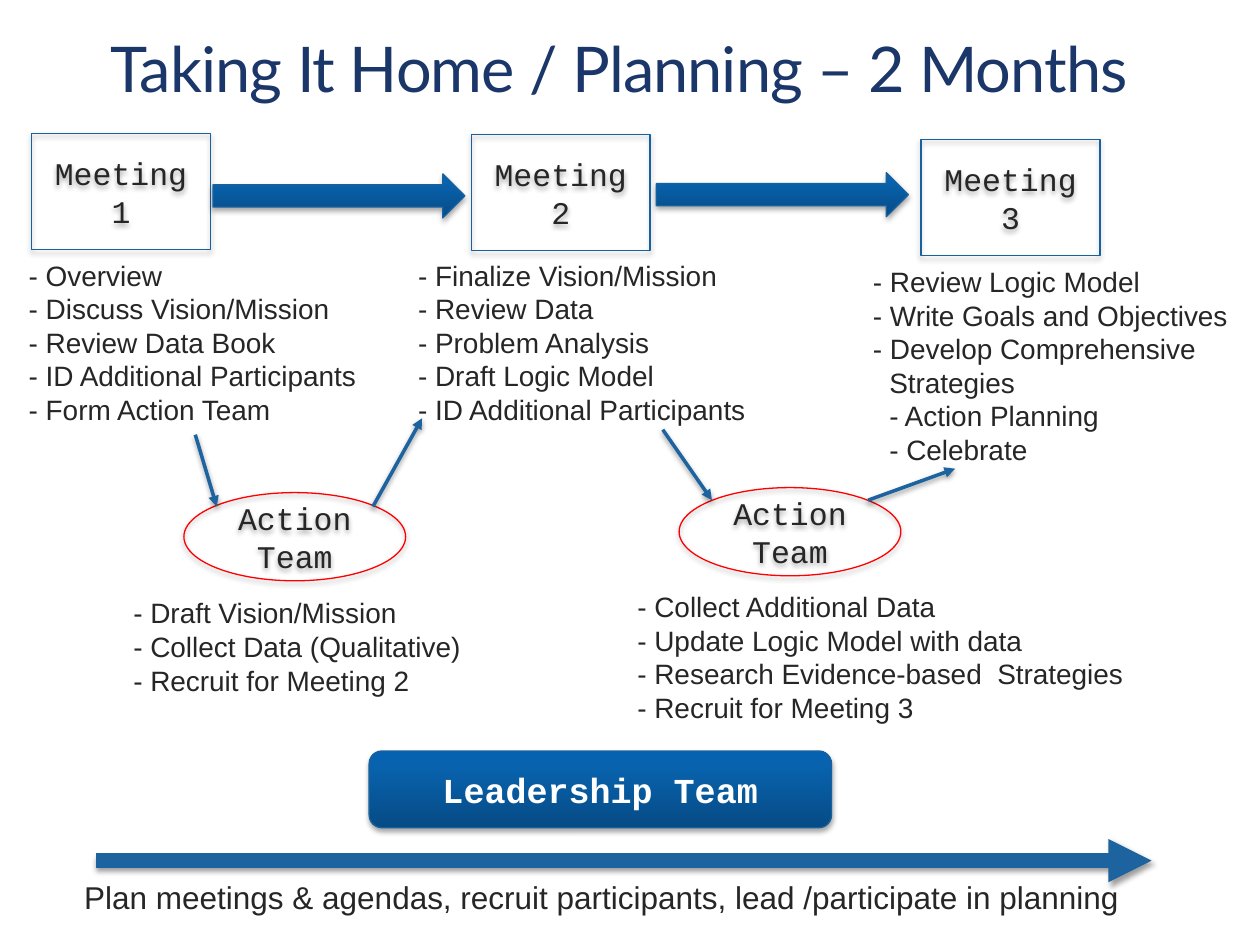
from copy import deepcopy
from dataclasses import dataclass

from lxml import etree
from pptx import Presentation
from pptx.dml.color import RGBColor
from pptx.enum.shapes import MSO_CONNECTOR as Connector, MSO_SHAPE as Shape
from pptx.enum.text import MSO_ANCHOR as Anchor, PP_ALIGN as Align
from pptx.oxml.ns import qn
from pptx.util import Inches, Pt


@dataclass(frozen=True)
class Theme:
    title: str = "1B3668"
    text: str = "262626"
    white: str = "FFFFFF"
    outline: str = "18619F"
    connector: str = "1C639F"
    team: str = "FF0000"
    shadow: str = "000000"
    gradient: tuple = ((0, "064B85"), (0.8, "0862AD"), (1, "0562B1"))
    title_font: str = "Lato"
    body_font: str = "Arial"
    label_font: str = "Courier New"
    title_size: int = 36
    banner_size: int = 20
    label_size: int = 18
    list_size: int = 16
    hanging: float = 0.13


class SlideBuilder:
    def __init__(self, slide, theme):
        self.slide = slide
        self.theme = theme

    def add_run(self, paragraph, text, font, size, color, bold=False):
        run = paragraph.add_run()
        run.text = text
        run.font.name = font
        run.font.size = Pt(size)
        run.font.bold = bold
        run.font.color.rgb = RGBColor.from_string(color)
        return run

    def add_shadow(self, shape, opacity, distance):
        properties = shape._element.spPr
        for old in properties.findall(qn("a:effectLst")):
            properties.remove(old)
        effects = etree.SubElement(properties, qn("a:effectLst"))
        shadow = etree.SubElement(
            effects, qn("a:outerShdw"), blurRad=str(Pt(3.1)),
            dist=str(Pt(distance)), dir="5400000", rotWithShape="0")
        color = etree.SubElement(shadow, qn("a:srgbClr"), val=self.theme.shadow)
        etree.SubElement(color, qn("a:alpha"), val=str(opacity * 1000))

    def title(self, text, left, top, width, height):
        shape = self.slide.shapes.title
        shape.left, shape.top = Inches(left), Inches(top)
        shape.width, shape.height = Inches(width), Inches(height)
        shape.text_frame.vertical_anchor = Anchor.MIDDLE
        paragraph = shape.text_frame.paragraphs[0]
        paragraph.alignment = Align.CENTER
        run = self.add_run(paragraph, text, self.theme.title_font,
                           self.theme.title_size, self.theme.title)
        run._r.get_or_add_rPr().set("spc", "-50")

    def box(self, kind, left, top, width, height, outline, filled=False):
        shape = self.slide.shapes.add_shape(
            kind, Inches(left), Inches(top), Inches(width), Inches(height))
        if filled:
            shape.fill.gradient()
            shape.fill.gradient_angle = 90
            first = shape._element.spPr.find(".//" + qn("a:gs"))
            first.addnext(deepcopy(first))
            for stop, (position, color) in zip(shape.fill.gradient_stops,
                                               self.theme.gradient):
                stop.position = position
                stop.color.rgb = RGBColor.from_string(color)
        else:
            shape.fill.background()
        shape.line.color.rgb = RGBColor.from_string(outline)
        shape.line.width = Pt(0.75)
        self.add_shadow(shape, 35, 1.8)
        return shape

    def label(self, shape, text, size, color, bold=False):
        frame = shape.text_frame
        frame.word_wrap = True
        frame.vertical_anchor = Anchor.MIDDLE
        paragraph = frame.paragraphs[0]
        paragraph.alignment = Align.CENTER
        self.add_run(paragraph, text, self.theme.label_font, size, color, bold)

    def meeting(self, text, left, top):
        shape = self.box(Shape.RECTANGLE, left, top, 1.42, 0.92, self.theme.outline)
        self.label(shape, text, self.theme.label_size, self.theme.text)

    def action_team(self, left, top):
        shape = self.box(Shape.OVAL, left, top, 1.76, 0.7, self.theme.team)
        self.label(shape, "Action Team", self.theme.label_size, self.theme.text)

    def block_arrow(self, left, top):
        self.box(Shape.RIGHT_ARROW, left, top, 2, 0.35, self.theme.outline, filled=True)

    def banner(self, text, left, top, width, height):
        shape = self.box(Shape.ROUNDED_RECTANGLE, left, top, width, height,
                         self.theme.outline, filled=True)
        self.label(shape, text, self.theme.banner_size, self.theme.white, bold=True)

    def text_lines(self, lines, left, top, width, height, size):
        shape = self.slide.shapes.add_textbox(
            Inches(left), Inches(top), Inches(width), Inches(height))
        frame = shape.text_frame
        frame.word_wrap = True
        for index, line in enumerate(lines):
            paragraph = frame.add_paragraph() if index else frame.paragraphs[0]
            self.add_run(paragraph, line, self.theme.body_font, size, self.theme.text)
        return frame.paragraphs

    def indent(self, paragraph, first_line):
        properties = paragraph._p.get_or_add_pPr()
        properties.set("marL", str(Inches(self.theme.hanging)))
        properties.set("indent", str(Inches(first_line)))

    def arrow(self, start, end, width=2):
        line = self.slide.shapes.add_connector(
            Connector.STRAIGHT, *(Inches(value) for value in (*start, *end)))
        line.line.color.rgb = RGBColor.from_string(self.theme.connector)
        line.line.width = Pt(width)
        etree.SubElement(line.line._get_or_add_ln(), qn("a:tailEnd"), type="triangle")
        self.add_shadow(line, 38, 1.6)


def main():
    presentation = Presentation()
    presentation.slide_width, presentation.slide_height = Inches(10), Inches(7.5)
    theme = Theme()
    slide = presentation.slides.add_slide(presentation.slide_layouts[5])
    builder = SlideBuilder(slide, theme)
    builder.title("Taking It Home / Planning – 2 Months", 0.25, 0.16, 9.33, 0.75)

    # Meetings and the arrows between them
    for number, (left, top) in enumerate([(0.25, 1.06), (3.74, 1.07), (7.31, 1.11)], 1):
        builder.meeting(f"Meeting {number}", left, top)
    for left, top in [(1.69, 1.38), (5.21, 1.37)]:
        builder.block_arrow(left, top)

    # Meeting agendas
    builder.text_lines(
        ["- Overview", "- Discuss Vision/Mission", "- Review Data Book",
         "- ID Additional Participants", "- Form Action Team"],
        0.13, 2, 2.83, 1.45, theme.list_size)
    builder.text_lines(
        ["- Finalize Vision/Mission", "- Review Data", "- Problem Analysis",
         "- Draft Logic Model", "- ID Additional Participants"],
        3.22, 2, 2.83, 1.72, theme.list_size)
    final_agenda = builder.text_lines(
        ["- Review Logic Model", "- Write Goals and Objectives",
         "- Develop Comprehensive Strategies", "- Action Planning", "- Celebrate"],
        6.83, 2.05, 3.04, 1.72, theme.list_size)
    for index, paragraph in enumerate(final_agenda):
        builder.indent(paragraph, -theme.hanging if index < 3 else 0)

    # Action teams and their tasks
    for left, top in [(1.46, 3.91), (5.39, 3.87)]:
        builder.action_team(left, top)
    for start, end in [((1.55, 3.45), (1.72, 4.02)), ((2.96, 4.02), (3.35, 3.32)),
                       ((5.26, 3.41), (5.65, 3.97)), ((6.89, 3.97), (7.58, 3.72))]:
        builder.arrow(start, end)
    builder.text_lines(
        ["- Draft Vision/Mission", "- Collect Data (Qualitative)",
         "- Recruit for Meeting 2"],
        0.96, 4.68, 2.83, 0.91, theme.list_size)
    builder.text_lines(
        ["- Collect Additional Data", "- Update Logic Model with data",
         "- Research Evidence-based  Strategies", "- Recruit for Meeting 3"],
        4.96, 4.63, 4.08, 1.45, theme.list_size)

    # Leadership team timeline
    builder.banner("Leadership Team", 2.93, 5.96, 3.67, 0.61)
    builder.arrow((0.76, 6.83), (9.14, 6.83), width=8.25)
    builder.text_lines(
        ["Plan meetings & agendas, recruit participants, lead /participate in planning"],
        0.57, 6.92, 8.46, 0.4, theme.label_size)

    presentation.save("out.pptx")


if __name__ == "__main__":
    main()
